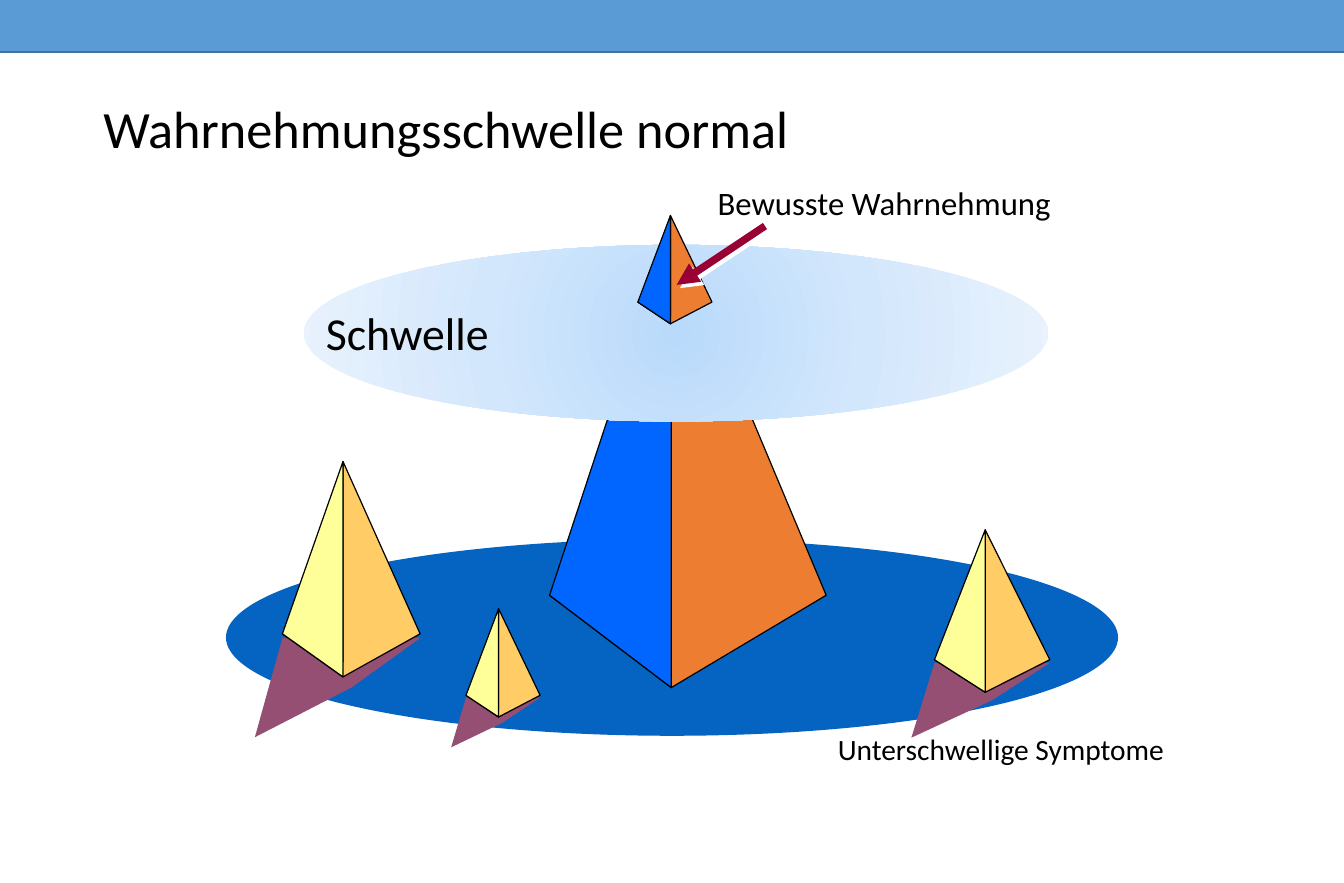
"""Build a slide on the normal threshold of perception."""
from typing import NamedTuple, Optional

from lxml import etree
from pptx import Presentation
from pptx import util as u
from pptx.dml.color import RGBColor
from pptx.enum import shapes, text
from pptx.oxml import ns
from pptx.shapes.base import BaseShape
from pptx.slide import Slide

BLACK = RGBColor(0x00, 0x00, 0x00)
BAND = RGBColor(0x5B, 0x9B, 0xD5)
BAND_EDGE = RGBColor(0x43, 0x73, 0x9E)
GROUND = RGBColor(0x05, 0x63, 0xC1)
PLUM = RGBColor(0x95, 0x4F, 0x72)
AMBER = RGBColor(0xFF, 0xCC, 0x66)
YELLOW = RGBColor(0xFF, 0xFF, 0x99)
ORANGE = RGBColor(0xED, 0x7D, 0x31)
BLUE = RGBColor(0x00, 0x66, 0xFF)
CRIMSON = RGBColor(0x99, 0x00, 0x33)
WHITE = RGBColor(0xFF, 0xFF, 0xFF)
HAZE = ((0, RGBColor(0xB9, 0xDA, 0xFB)), (50, RGBColor(0xD3, 0xE7, 0xFC)),
        (100, RGBColor(0xE9, 0xF2, 0xFD)))

APEX = 0.44
SHADE = ((0, 0.82), (-0.2, 1.28), (0.5, 1.05), (1, 0.82))
RIGHT_FACE = ((0, 0.8), (APEX, 1), (1, 0.8), (APEX, 0), (APEX, 0.93))
LEFT_FACE = ((0, 0.8), (APEX, 0), (APEX, 1))


class Pyramid(NamedTuple):
    left: float
    top: float
    width: float
    height: float
    light: RGBColor
    dark: RGBColor
    shade: Optional[RGBColor] = None


class Label(NamedTuple):
    words: str
    left: float
    top: float
    width: float
    height: float
    size: int
    wrap: bool = False


SYMPTOMS = (
    Pyramid(7.94, 4.5, 0.98, 1.38, YELLOW, AMBER, PLUM),
    Pyramid(3.96, 5.17, 0.63, 0.92, YELLOW, AMBER, PLUM),
    Pyramid(2.4, 3.92, 1.17, 1.83, YELLOW, AMBER, PLUM),
    Pyramid(4.67, 1.92, 2.35, 3.92, BLUE, ORANGE),
)
CONSCIOUS_TIP = Pyramid(5.42, 1.83, 0.63, 0.92, BLUE, ORANGE)
LABELS = (
    Label("Wahrnehmungsschwelle normal", 0.78, 0.58, 9.85, 1.08, 32, True),
    Label("Schwelle", 2.67, 2.54, 1.69, 0.61, 28),
    Label("Unterschwellige Symptome", 7.02, 6.16, 3.19, 0.43, 18),
    Label("Bewusste Wahrnehmung", 6, 1.5, 3.24, 0.47, 20),
)


def paint(sp: BaseShape, fill: RGBColor, edge: Optional[RGBColor] = None,
          weight: float = 0.75) -> None:
    """Give a shape a flat fill and an optional outline."""
    sp.shadow.inherit = False
    sp.fill.solid()
    sp.fill.fore_color.rgb = fill
    if edge is None:
        sp.line.fill.background()
    else:
        sp.line.color.rgb = edge
        sp.line.width = u.Pt(weight)


def add_preset(s: Slide, kind: shapes.MSO_SHAPE, left: float, top: float,
               width: float, height: float) -> BaseShape:
    """Add a preset shape placed in inches."""
    return s.shapes.add_shape(kind, u.Inches(left), u.Inches(top),
                              u.Inches(width), u.Inches(height))


def add_pyramid(s: Slide, pyramid: Pyramid) -> None:
    """Draw a pyramid as a group of faces, with its cast shade if any."""
    group = s.shapes.add_group_shape()
    faces = [(RIGHT_FACE, pyramid.dark, BLACK), (LEFT_FACE, pyramid.light, BLACK)]
    if pyramid.shade is not None:
        faces.insert(0, (SHADE, pyramid.shade, None))
    for outline, fill, edge in faces:
        points = [(u.Inches(pyramid.left + x * pyramid.width),
                   u.Inches(pyramid.top + y * pyramid.height)) for x, y in outline]
        builder = group.shapes.build_freeform(*points[0])
        builder.add_line_segments(points[1:], close=True)
        paint(builder.convert_to_shape(), fill, edge)


def add_threshold(s: Slide) -> None:
    """Draw the threshold ellipse with a gradient spreading from its centre."""
    sp = add_preset(s, shapes.MSO_SHAPE.OVAL, 2.58, 2.08, 6.33, 1.5)
    paint(sp, HAZE[0][1])
    sp.fill.gradient()
    grad = sp._element.spPr.find(ns.qn("a:gradFill"))
    for child in list(grad):
        grad.remove(child)
    stops = etree.SubElement(grad, ns.qn("a:gsLst"))
    for position, color in HAZE:
        stop = etree.SubElement(stops, ns.qn("a:gs"), pos=str(position * 1000))
        etree.SubElement(stop, ns.qn("a:srgbClr"), val=str(color))
    radial = etree.SubElement(grad, ns.qn("a:path"), path="circle")
    etree.SubElement(radial, ns.qn("a:fillToRect"),
                     l="50000", t="50000", r="50000", b="50000")


def add_label(s: Slide, label: Label) -> None:
    """Add a line of text in its box."""
    sp = s.shapes.add_textbox(u.Inches(label.left), u.Inches(label.top),
                              u.Inches(label.width), u.Inches(label.height))
    tf = sp.text_frame
    tf.word_wrap = label.wrap
    tf.vertical_anchor = text.MSO_ANCHOR.MIDDLE if label.wrap else text.MSO_ANCHOR.TOP
    p = tf.paragraphs[0]
    if label.wrap:
        p.line_spacing = 0.9
    r = p.add_run()
    r.text = label.words
    r.font.name = "Calibri"
    r.font.size = u.Pt(label.size)
    r.font.color.rgb = BLACK


def add_arrow(s: Slide) -> None:
    """Draw the arrow to the conscious tip, with a white offset shadow."""
    sp = s.shapes.add_connector(shapes.MSO_CONNECTOR.STRAIGHT, u.Inches(6.5),
                                u.Inches(1.92), u.Inches(5.75), u.Inches(2.42))
    sp.line.color.rgb = CRIMSON
    sp.line.width = u.Pt(4.5)
    etree.SubElement(sp.line._get_or_add_ln(), ns.qn("a:tailEnd"), type="triangle")
    effects = etree.SubElement(sp._element.spPr, ns.qn("a:effectLst"))
    shadow = etree.SubElement(effects, ns.qn("a:outerShdw"), dist=str(u.Pt(2.8)),
                              dir=str(45 * 60000), algn="ctr", rotWithShape="0")
    etree.SubElement(shadow, ns.qn("a:srgbClr"), val=str(WHITE))


def main() -> None:
    """Assemble the slide from back to front and save it."""
    prs = Presentation()
    prs.slide_width, prs.slide_height = u.Inches(11.42), u.Inches(7.5)
    s = prs.slides.add_slide(prs.slide_layouts[6])
    band = add_preset(s, shapes.MSO_SHAPE.RECTANGLE, -0.36, -0.14, 12.29, 0.58)
    paint(band, BAND, BAND_EDGE, 1)
    paint(add_preset(s, shapes.MSO_SHAPE.OVAL, 1.92, 4.58, 7.58, 1.67), GROUND)
    for pyramid in SYMPTOMS:
        add_pyramid(s, pyramid)
    add_threshold(s)
    add_pyramid(s, CONSCIOUS_TIP)
    for label in LABELS:
        add_label(s, label)
    add_arrow(s)
    prs.save("out.pptx")


if __name__ == "__main__":
    main()
